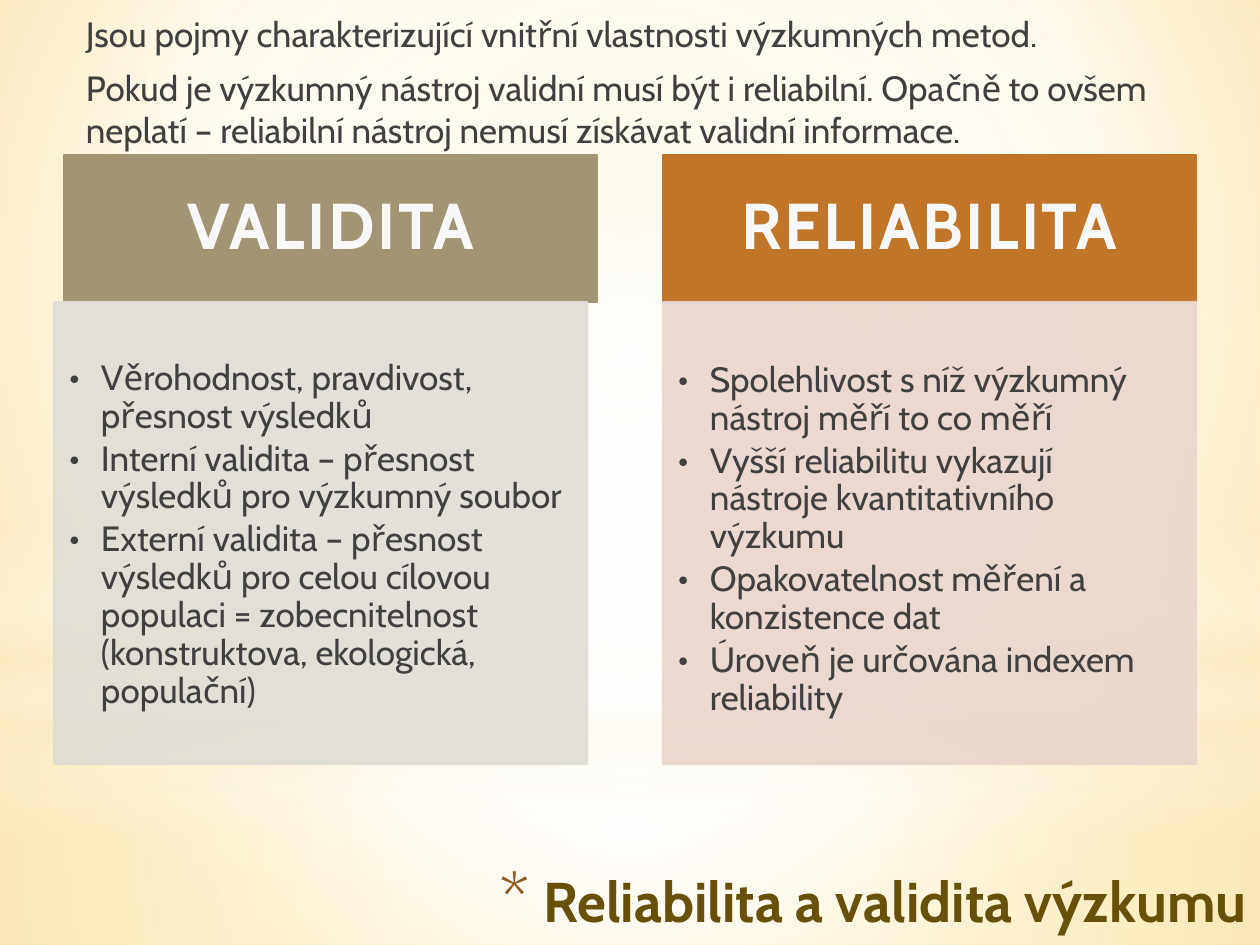
from dataclasses import dataclass

from lxml import etree
from pptx import Presentation
from pptx import util as u
from pptx.dml.color import RGBColor
from pptx.enum import shapes, text
from pptx.oxml.ns import qn

PX = 914400 / 126  # EMU per pixel


@dataclass(frozen=True)
class Theme:
    font: str = "Cabin"
    ink: str = "404040"
    title: str = "695008"
    star: str = "91581F"
    light: str = "F8F8F8"
    cream: str = "FBEEC9"
    white: str = "FFFFFF"
    olive: str = "A19574"
    olive_tint: str = "E0DDD6"
    orange: str = "C17529"
    orange_tint: str = "E9D6CD"
    title_size: int = 32
    header_size: int = 37
    body_size: int = 20


T = Theme()
CENTER = (50, 50, 50, 50)


def px(n):
    return u.Emu(round(n * PX))


def assign(obj, values):
    for name, value in values.items():
        setattr(obj, name, value)


def sub(parent, tag, **attrs):
    return etree.SubElement(parent, qn(tag), {k: str(v) for k, v in attrs.items()})


def set_gradient(props, stops, focus=None):
    """Swap the solid fill for a circular gradient, or a vertical one without focus."""
    solid = props.find(qn("a:solidFill"))
    grad = etree.Element(qn("a:gradFill"), rotWithShape="1")
    stop_list = sub(grad, "a:gsLst")
    for pos, color, alpha in stops:
        clr = sub(sub(stop_list, "a:gs", pos=pos * 1000), "a:srgbClr", val=color)
        if alpha < 100:
            sub(clr, "a:alpha", val=alpha * 1000)
    if focus:
        sides = {k: v * 1000 for k, v in zip("ltrb", focus)}
        sub(sub(grad, "a:path", path="circle"), "a:fillToRect", **sides)
    else:
        sub(grad, "a:lin", ang=90 * 60000, scaled=0)
    props.replace(solid, grad)


def add_glow(s, kind, top, height, stops, focus=CENTER):
    sp = s.shapes.add_shape(kind, 0, px(top), px(1260), px(height))
    sp.shadow.inherit = False
    sp.fill.solid()
    sp.line.fill.background()
    set_gradient(sp.element.spPr, stops, focus)


def add_background(s):
    s.background.fill.solid()
    set_gradient(s.element.find(".//" + qn("p:bgPr")),
                 [(0, "FEEAB3", 100), (60, T.white, 100), (100, "FFD96C", 100)],
                 (20, 10, 20, 60))
    rect, oval = shapes.MSO_SHAPE.RECTANGLE, shapes.MSO_SHAPE.OVAL
    w, c = T.white, T.cream
    add_glow(s, rect, 703, 242, [(0, w, 91), (37, w, 76), (100, c, 79)])
    add_glow(s, rect, 0, 703, [(0, w, 89), (48, w, 62), (100, c, 79)])
    add_glow(s, rect, 519, 315, [(0, w, 0), (29, w, 30), (45, c, 40),
                                 (55, w, 26), (65, c, 60), (100, w, 0)], None)
    add_glow(s, oval, 220, 703, [(0, w, 100), (56, w, 0)])


def add_bullet(p, char, indent, color=None, percent=None):
    pPr = p._p.get_or_add_pPr()
    pPr.set("marL", str(px(indent)))
    pPr.set("indent", str(-px(indent)))
    if color:
        sub(sub(pPr, "a:buClr"), "a:srgbClr", val=color)
    if percent:
        sub(pPr, "a:buSzPct", val=percent * 1000)
    sub(pPr, "a:buFont", typeface=T.font)
    sub(pPr, "a:buChar", char=char)


def fill_text(sp, lines, insets, size, color, bold=False, para=None, bullet=None,
              anchor=text.MSO_ANCHOR.TOP, before=0):
    tf = sp.text_frame
    sides = ("margin_left", "margin_top", "margin_right", "margin_bottom")
    assign(tf, {"word_wrap": True, "vertical_anchor": anchor,
                **dict(zip(sides, map(px, insets)))})
    for i, line in enumerate(lines):
        p = tf.paragraphs[0] if i == 0 else tf.add_paragraph()
        assign(p, {"alignment": text.PP_ALIGN.LEFT, **(para or {})})
        if i and before:
            p.space_before = u.Pt(before)
        if bullet:
            add_bullet(p, **bullet)
        r = p.add_run()
        r.text = line
        assign(r.font, {"name": T.font, "size": u.Pt(size), "bold": bold})
        r.font.color.rgb = RGBColor.from_string(color)


def add_text(s, box, lines, insets, size, color, **fmt):
    sp = s.shapes.add_textbox(*map(px, box))
    fill_text(sp, lines, insets, size, color, **fmt)


def add_panel(s, box, color, alpha=100):
    sp = s.shapes.add_shape(shapes.MSO_SHAPE.RECTANGLE, *map(px, box))
    sp.shadow.inherit = False
    sp.fill.solid()
    sp.line.width = u.Pt(1.25)
    for fmt in (sp.fill.fore_color, sp.line.color):
        fmt.rgb = RGBColor.from_string(color)
    if alpha < 100:
        for clr in sp.element.spPr.iter(qn("a:srgbClr")):
            sub(clr, "a:alpha", val=alpha * 1000)
    return sp


def add_column(s, header_left, body_left, heading, points, dark, tint, body_top):
    # Heading block
    sp = add_panel(s, (header_left, 155, 533, 147), dark)
    fill_text(sp, [heading], (37, 20, 37, 20), T.header_size, T.light, bold=True,
              para={"alignment": text.PP_ALIGN.CENTER, "line_spacing": 0.9},
              anchor=text.MSO_ANCHOR.MIDDLE)
    for r in sp.text_frame.paragraphs[0].runs:
        r._r.get_or_add_rPr().set("spc", "150")
    # Bulleted body
    sp = add_panel(s, (body_left, 302, 533, 462), tint, 90)
    fill_text(sp, points, (15, body_top, 20, 21), T.body_size, T.ink,
              para={"line_spacing": 0.9, "space_after": u.Pt(3)},
              bullet={"char": "•", "indent": 32})


def main():
    prs = Presentation()
    assign(prs, {"slide_width": px(1260), "slide_height": px(945)})
    s = prs.slides.add_slide(prs.slide_layouts[6])
    add_background(s)

    # Title at the bottom
    add_text(s, (131, 855, 1129, 90), ["Reliabilita a validita výzkumu"],
             (13, 6, 13, 6), T.title_size, T.title, bold=True,
             para={"alignment": text.PP_ALIGN.RIGHT}, anchor=text.MSO_ANCHOR.MIDDLE,
             bullet={"char": "*", "indent": 44, "color": T.star, "percent": 128})

    # Introduction
    add_text(s, (64, 4, 1132, 148), [
        "Jsou pojmy charakterizující vnitřní vlastnosti výzkumných metod.",
        "Pokud je výzkumný nástroj validní musí být i reliabilní. Opačně to ovšem "
        "neplatí – reliabilní nástroj nemusí získávat validní informace.",
    ], (22, 8, 13, 6), T.body_size, T.ink, para={"space_after": u.Pt(3)}, before=4)

    # Two compared concepts
    add_column(s, 64, 54, "VALIDITA", [
        "Věrohodnost, pravdivost, přesnost výsledků",
        "Interní validita – přesnost výsledků pro výzkumný soubor",
        "Externí validita – přesnost výsledků pro celou cílovou populaci = "
        "zobecnitelnost (konstruktova, ekologická, populační)",
    ], T.olive, T.olive_tint, 58)
    add_column(s, 663, 663, "RELIABILITA", [
        "Spolehlivost s níž výzkumný nástroj měří to co měří",
        "Vyšší reliabilitu vykazují nástroje kvantitativního výzkumu",
        "Opakovatelnost měření a konzistence dat",
        "Úroveň je určována indexem reliability",
    ], T.orange, T.orange_tint, 60)
    prs.save("out.pptx")


if __name__ == "__main__":
    main()
